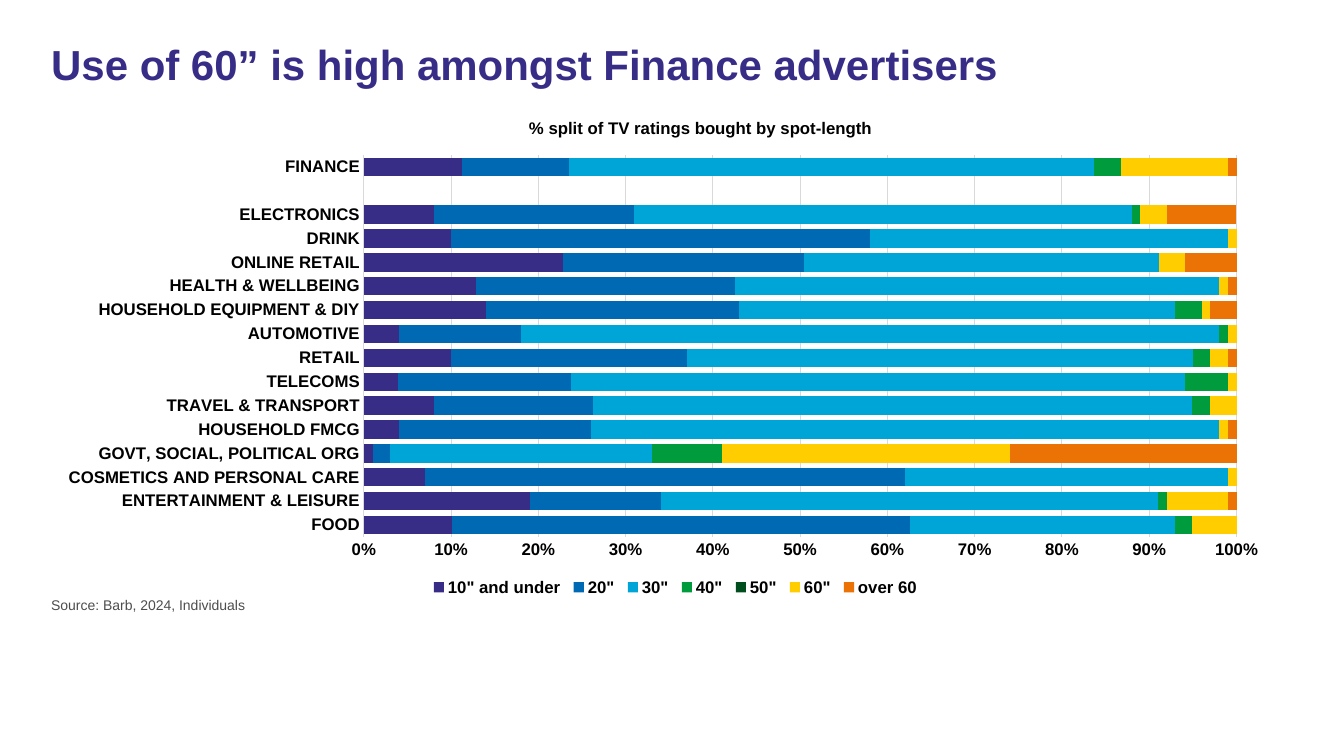
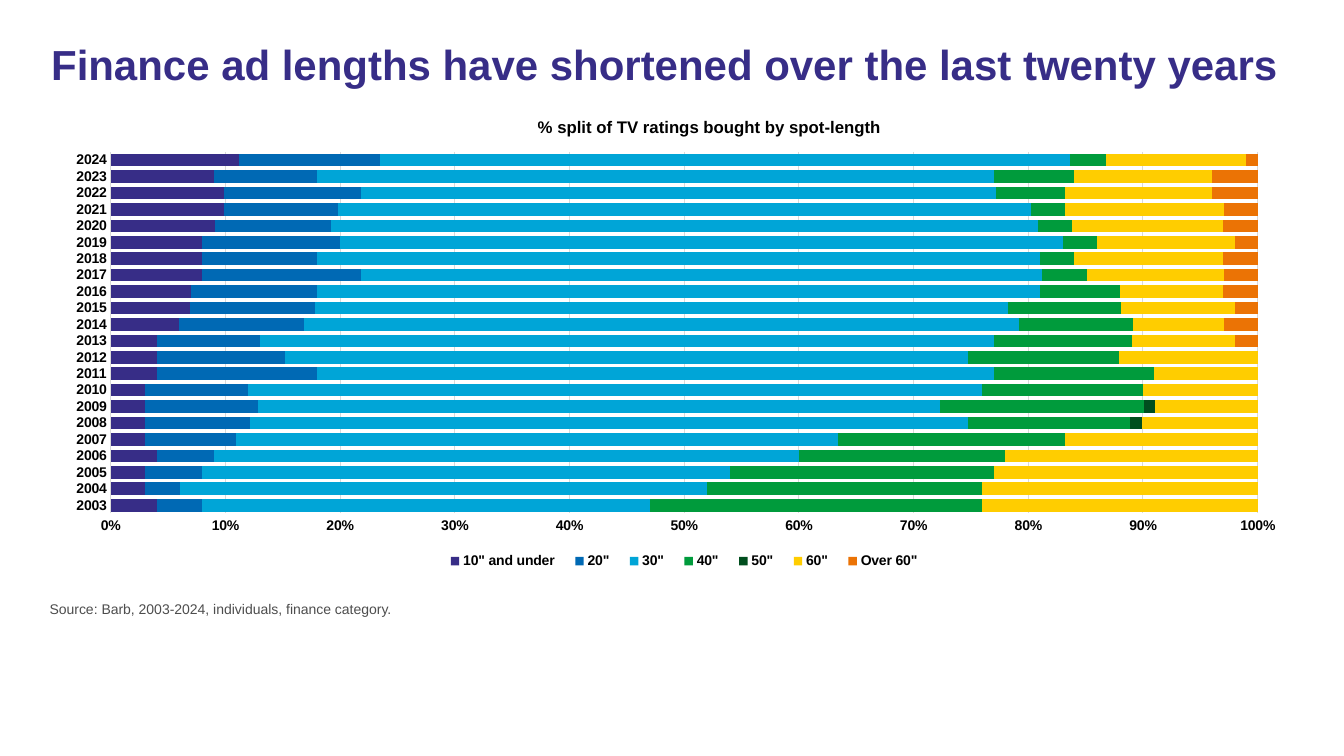
from lxml import etree
from pptx import Presentation
from pptx.chart.data import CategoryChartData
from pptx.dml.color import RGBColor
from pptx.enum.chart import XL_CHART_TYPE, XL_LEGEND_POSITION, XL_TICK_MARK
from pptx.enum.text import MSO_ANCHOR
from pptx.oxml.ns import qn
from pptx.util import Cm, Pt

STACKED = XL_CHART_TYPE.BAR_STACKED_100
BOTTOM = XL_LEGEND_POSITION.BOTTOM
NO_TICK = XL_TICK_MARK.NONE
TOP = MSO_ANCHOR.TOP

FONT = "Arial"
COLORS = {
    "title": "372D87",
    "source": "4D4D4D",
    "text": "000000",
    "grid": "D9D9D9",
}
SPOTS = {
    '10" and under': "372D87",
    '20"': "0069B4",
    '30"': "00A5D7",
    '40"': "009B3C",
    '50"': "004E1E",
    '60"': "FFCD00",
    "over": "EB7305",
}

SECTORS = [
    "FOOD", "ENTERTAINMENT & LEISURE", "COSMETICS AND PERSONAL CARE",
    "GOVT, SOCIAL, POLITICAL ORG", "HOUSEHOLD FMCG", "TRAVEL & TRANSPORT",
    "TELECOMS", "RETAIL", "AUTOMOTIVE", "HOUSEHOLD EQUIPMENT & DIY",
    "HEALTH & WELLBEING", "ONLINE RETAIL", "DRINK", "ELECTRONICS", "", "FINANCE",
]
SECTOR_ROWS = [
    [10, 19, 7, 1, 4, 8, 4, 10, 4, 14, 13, 23, 10, 8, None, 11],
    [52, 15, 55, 2, 22, 18, 20, 27, 14, 29, 30, 28, 48, 23, None, 12],
    [30, 57, 37, 30, 72, 68, 71, 58, 80, 50, 56, 41, 41, 57, None, 59],
    [2, 1, 0, 8, 0, 2, 5, 2, 1, 3, 0, 0, 0, 1, None, 3],
    [0, 0, 0, 0, 0, 0, 0, 0, 0, 0, 0, 0, 0, 0, None, 0],
    [5, 7, 1, 33, 1, 3, 1, 2, 1, 1, 1, 3, 1, 3, None, 12],
    [0, 1, 0, 26, 1, 0, 0, 1, 0, 3, 1, 6, 0, 8, None, 1],
]
YEARS = [str(year) for year in range(2003, 2025)]
YEAR_ROWS = [
    [4, 3, 3, 4, 3, 3, 3, 3, 4, 4, 4, 6, 7, 7, 8, 8, 8, 9, 10, 10, 9, 11],
    [4, 3, 5, 5, 8, 9, 10, 9, 14, 11, 9, 11, 11, 11, 14, 10, 12, 10, 10, 12, 9, 12],
    [39, 46, 46, 51, 53, 62, 60, 64, 59, 59, 64, 63, 61, 63, 60, 63, 63, 61, 61, 56, 59, 59],
    [29, 24, 23, 18, 20, 14, 18, 14, 14, 13, 12, 10, 10, 7, 4, 3, 3, 3, 3, 6, 7, 3],
    [0, 0, 0, 0, 0, 1, 1, 0, 0, 0, 0, 0, 0, 0, 0, 0, 0, 0, 0, 0, 0, 0],
    [24, 24, 23, 22, 17, 10, 9, 10, 9, 12, 9, 8, 10, 9, 12, 13, 12, 13, 14, 13, 12, 12],
    [0, 0, 0, 0, 0, 0, 0, 0, 0, 0, 2, 3, 2, 3, 3, 3, 2, 3, 3, 4, 4, 1],
]


def style(font, size, color, bold=False):
    font.name = FONT
    font.size = Pt(size)
    font.bold = bold
    font.color.rgb = RGBColor.from_string(COLORS[color])


def add_text(slide, text, box, size, color, bold=False):
    frame = slide.shapes.add_textbox(*map(Cm, box)).text_frame
    frame.word_wrap = True
    frame.vertical_anchor = TOP
    para = frame.paragraphs[0]
    para.text = text
    style(para.font, size, color, bold)
    return para


def add_title(slide, text):
    para = add_text(slide, text, (1.04, 1, 31.5, 2.84), 30, "title", True)
    para.line_spacing = 0.9


def add_source(slide, text, left, top):
    add_text(slide, text, (left, top, 31.5, 0.84), 10, "source")


def place(chart, tag, index, inner=False, **spots):
    node = chart.element.find(".//" + qn(tag))
    for old in node.findall(qn("c:layout")):
        node.remove(old)
    layout = etree.Element(qn("c:layout"))
    manual = etree.SubElement(layout, qn("c:manualLayout"))
    parts = [("layoutTarget", "inner")] if inner else []
    parts += [("xMode", "edge"), ("yMode", "edge"), *spots.items()]
    for name, value in parts:
        etree.SubElement(manual, qn("c:" + name)).set("val", str(value))
    node.insert(index, layout)


def style_line(line):
    line.color.rgb = RGBColor.from_string(COLORS["grid"])
    line.width = Pt(0.75)


def style_axes(chart, size):
    for axis in (chart.category_axis, chart.value_axis):
        axis.major_tick_mark = axis.minor_tick_mark = NO_TICK
        style(axis.tick_labels.font, size, "text", True)
    style_line(chart.category_axis.format.line)
    scale = chart.value_axis
    scale.format.line.fill.background()
    scale.has_major_gridlines = True
    style_line(scale.major_gridlines.format.line)
    scale.minimum_scale, scale.maximum_scale, scale.major_unit = 0, 1, 0.1
    scale.tick_labels.number_format = "0%"
    scale.tick_labels.number_format_is_linked = False


def add_bars(slide, cats, rows, last, box, size, plot_x, plot_w):
    data = CategoryChartData()
    data.categories = cats
    for name, row in zip([*SPOTS][:-1] + [last], rows):
        data.add_series(name, row)
    chart = slide.shapes.add_chart(STACKED, *map(Cm, box), data).chart
    style(chart.font, size, "text", True)

    plot = chart.plots[0]
    plot.gap_width = 30
    plot.overlap = 100
    plot.vary_by_categories = False
    for series, color in zip(plot.series, SPOTS.values()):
        series.format.fill.solid()
        series.format.fill.fore_color.rgb = RGBColor.from_string(color)
    style_axes(chart, size)

    chart.has_title = True
    para = chart.chart_title.text_frame.paragraphs[0]
    para.text = "% split of TV ratings bought by spot-length"
    style(para.font, 12, "text", True)
    chart.has_legend = True
    chart.legend.position = BOTTOM
    chart.legend.include_in_layout = False
    style(chart.legend.font, size, "text", True)

    place(chart, "c:title", 1, x=0.39, y=0.03)
    place(chart, "c:legend", 1, x=0.31, y=0.94, w=0.4, h=0.06)
    place(chart, "c:plotArea", 0, True, x=plot_x, y=0.11, w=plot_w, h=0.76)


def main():
    deck = Presentation()
    deck.slide_width, deck.slide_height = Cm(33.87), Cm(19.05)
    blank = deck.slide_layouts[6]

    slide = deck.slides.add_slide(blank)
    add_bars(slide, SECTORS, SECTOR_ROWS, "over 60",
             (1, 2.51, 31.42, 12.67), 12, 0.26, 0.7)
    add_title(slide, "Use of 60” is high amongst Finance advertisers")
    add_source(slide, "Source: Barb, 2024, Individuals", 1.04, 14.91)

    slide = deck.slides.add_slide(blank)
    add_bars(slide, YEARS, YEAR_ROWS, 'Over 60"',
             (1.22, 2.51, 31.42, 11.99), 10, 0.05, 0.92)
    add_title(slide, "Finance ad lengths have shortened over the last twenty years")
    add_source(slide, "Source: Barb, 2003-2024, individuals, finance category.", 1, 15.01)

    deck.save("out.pptx")


if __name__ == "__main__":
    main()
